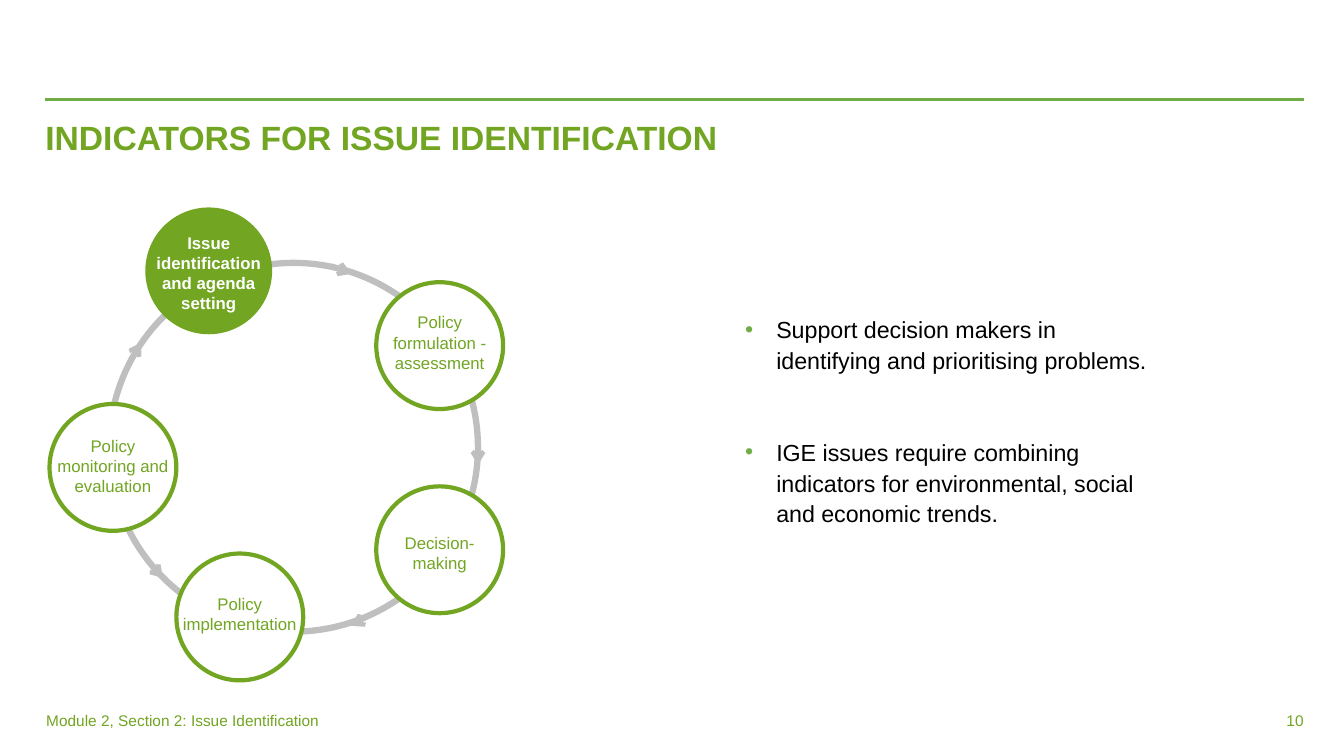
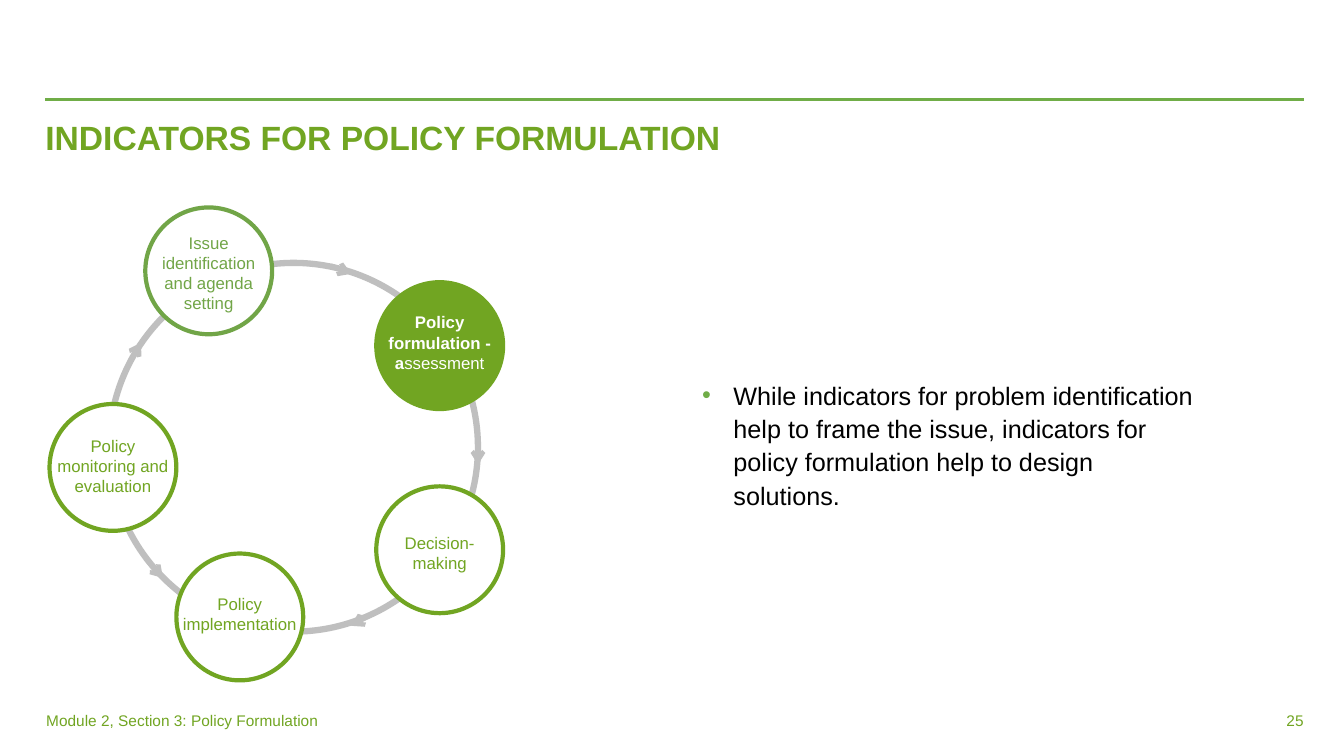
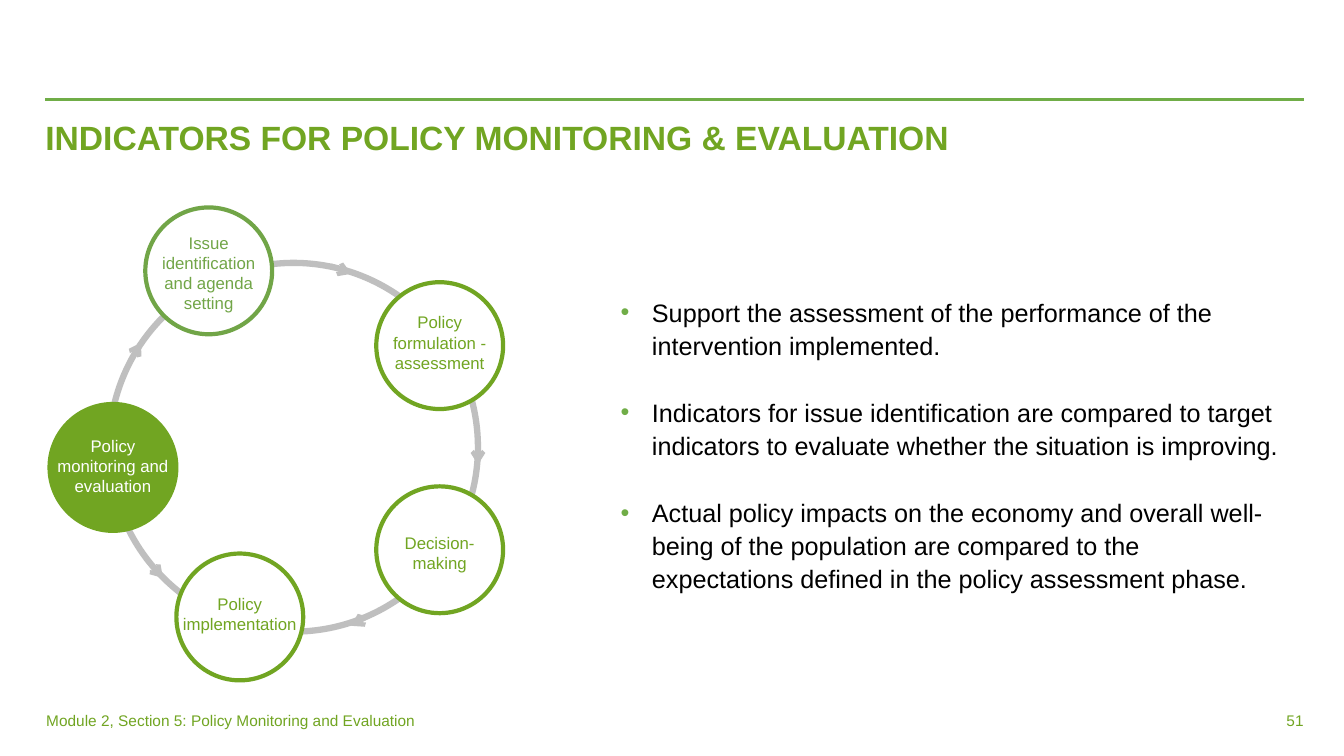
from lxml.etree import SubElement
from pptx import Presentation
from pptx.dml.color import RGBColor
from pptx.enum.shapes import MSO_CONNECTOR, MSO_SHAPE
from pptx.enum.text import MSO_ANCHOR, MSO_AUTO_SIZE, PP_ALIGN
from pptx.oxml.ns import qn
from pptx.util import Inches, Pt

HUES = {"green": "71A522", "moss": "71A547", "rule": "70AD47",
        "grey": "BFBFBF", "white": "FFFFFF", "black": "000000"}
FONT = "Arial"
WIDE, HIGH = Inches(13.333), Inches(7.5)
COLS, ROWS = 160, 90
LEFT, RIGHT = 5.4, 155.2
CYCLE = (5.9, 24.7)
RING = (7.1, 6.6, 43.9)
DISC = 15.1
STAGES = [
    ("Issue identification and agenda setting", (11.4, 0), (2.3, 15.2, 10.9)),
    ("Policy formulation - assessment", (38.9, 8.9), (2.9, 15.2, 8.5)),
    ("Decision-making", (38.9, 33.2), (4.7, 14.2, 6.4)),
    ("Policy implementation", (15.1, 41.2), (2.9, 16.2, 8.5)),
    ("Policy monitoring and evaluation", (0, 23.4), (3.1, 17, 8.5)),
]
ARROWS = [
    (9.8, 17.9, 10.9, 16.1),
    (33.5, 6.9, 35.9, 7.9),
    (51, 28.6, 51, 30.6),
    (38.5, 48.4, 35.9, 49.8),
    (11.4, 41.8, 13.5, 44.1),
]
PAGES = [
    {"title": "INDICATORS FOR ISSUE IDENTIFICATION",
     "foot": "Module 2, Section 2: Issue Identification", "page": "10",
     "live": 0, "bold": "Issue identification and agenda setting",
     "box": (88.7, 36.6, 49.6, 29.3), "size": 16.6, "gap": 44,
     "points": [
         "Support decision makers in identifying and prioritising problems.",
         "IGE issues require combining indicators for environmental, social "
         "and economic trends."]},
    {"title": "INDICATORS FOR POLICY FORMULATION",
     "foot": "Module 2, Section 3: Policy Formulation", "page": "25",
     "live": 1, "bold": "Policy formulation - a",
     "box": (83.6, 44.3, 59.9, 18.1), "size": 18, "gap": 24,
     "points": [
         "While indicators for problem identification help to frame the "
         "issue, indicators for policy formulation help to design solutions."]},
    {"title": "INDICATORS FOR POLICY MONITORING & EVALUATION",
     "foot": "Module 2, Section 5: Policy Monitoring and Evaluation",
     "page": "51", "live": 4, "bold": "",
     "box": (73.9, 34.4, 79.2, 42.4), "size": 18, "gap": 24,
     "points": [
         "Support the assessment of the performance of the intervention "
         "implemented.",
         "Indicators for issue identification are compared to target "
         "indicators to evaluate whether the situation is improving.",
         "Actual policy impacts on the economy and overall well-being of the "
         "population are compared to the expectations defined in the policy "
         "assessment phase."]},
]


def hue(name):
    """Return the named colour."""
    return RGBColor.from_string(HUES[name])


def cells(*spots):
    """Turn alternating columns and rows into slide lengths."""
    units = (WIDE / COLS, HIGH / ROWS)
    return [round(spot * units[i % 2]) for i, spot in enumerate(spots)]


def write(para, text, size, tint, bold=False):
    """Add one run to a paragraph."""
    run = para.add_run()
    run.text = text
    font = run.font
    font.name, font.size, font.bold = FONT, Pt(size), bold
    font.color.rgb = hue(tint)


def setup(frame, anchor=MSO_ANCHOR.TOP, left=0.0, right=0.0):
    """Set wrapping, anchor and insets, and return the first paragraph."""
    frame.word_wrap = True
    frame.auto_size = MSO_AUTO_SIZE.NONE
    frame.vertical_anchor = anchor
    frame.margin_left, frame.margin_right = Inches(left), Inches(right)
    frame.margin_top = frame.margin_bottom = Inches(0.05)
    return frame.paragraphs[0]


def label(slide, box, align, left=0.0, right=0.0):
    """Add a middle-anchored text box and return its paragraph."""
    frame = slide.shapes.add_textbox(*cells(*box)).text_frame
    para = setup(frame, MSO_ANCHOR.MIDDLE, left, right)
    para.alignment = align
    return para


def stroke(slide, ends, tint, width, arrow=False):
    """Draw a straight line, with an arrowhead if asked."""
    line = slide.shapes.add_connector(MSO_CONNECTOR.STRAIGHT, *cells(*ends))
    line.line.color.rgb = hue(tint)
    line.line.width = Pt(width)
    if arrow:
        SubElement(line.line._get_or_add_ln(), qn("a:tailEnd"), type="arrow")
    SubElement(line._element.spPr, qn("a:effectLst"))


def circle(slide, left, top, size, fill=None, edge=None, width=3):
    """Draw a circle with an optional fill and edge."""
    shape = slide.shapes.add_shape(
        MSO_SHAPE.OVAL, *cells(left, top, size, size))
    shape.shadow.inherit = False
    if fill:
        shape.fill.solid()
        shape.fill.fore_color.rgb = hue(fill)
    else:
        shape.fill.background()
    if edge:
        shape.line.color.rgb = hue(edge)
        shape.line.width = Pt(width)
    else:
        shape.line.fill.background()


def frame(slide, title, foot, page):
    """Place the rule, title, footer and page number."""
    stroke(slide, (LEFT, 11.8, RIGHT, 11.8), "rule", 2)
    head = slide.shapes.title
    head.left, head.top, head.width, head.height = cells(
        LEFT, 13.9, RIGHT - LEFT, 12.5)
    para = setup(head.text_frame)
    para.alignment, para.line_spacing = PP_ALIGN.LEFT, 0.9
    write(para, title, 24, "green", True)
    note = label(slide, (LEFT + 0.1, 83.4, 48.1, 4.8), PP_ALIGN.LEFT, 0, 0.1)
    write(note, foot, 11, "green")
    folio = label(slide, (RIGHT - 13.3, 83.4, 13.3, 4.8),
                  PP_ALIGN.RIGHT, 0.1, 0)
    write(folio, page, 11, "green")


def stage(slide, x, y, index, live, bold):
    """Draw one stage of the cycle with its centred label."""
    text, (dx, dy), (drop, wide, high) = STAGES[index]
    tint = "moss" if index == 0 else "green"
    if live:
        edge = None if index == 0 else "green"
        circle(slide, x + dx, y + dy, DISC, "green", edge)
    else:
        circle(slide, x + dx, y + dy, DISC, "white", tint)
    box = (x + dx + (DISC - wide) / 2, y + dy + drop, wide, high)
    para = label(slide, box, PP_ALIGN.CENTER, 0.1, 0.1)
    cut = len(bold) if live else 0
    for part, heavy in ((text[:cut], True), (text[cut:], False)):
        if part:
            write(para, part, 12, "white" if live else tint, heavy)


def cycle(slide, spot, live, bold):
    """Draw the policy cycle from its top left corner."""
    x, y = spot
    dx, dy, size = RING
    circle(slide, x + dx, y + dy, size, None, "grey", 4.5)
    for a, b, c, d in ARROWS:
        stroke(slide, (x + a, y + b, x + c, y + d), "grey", 3, True)
    for index in range(len(STAGES)):
        stage(slide, x, y, index, index == live, bold)


def bullet(para):
    """Give a paragraph a green hanging bullet."""
    props = para._p.get_or_add_pPr()
    props.set("marL", str(Inches(0.31)))
    props.set("indent", str(-Inches(0.31)))
    tint = SubElement(props, qn("a:buClr"))
    SubElement(tint, qn("a:srgbClr"), val=HUES["rule"])
    SubElement(props, qn("a:buFont"), typeface=FONT)
    SubElement(props, qn("a:buChar"), char="•")


def points(slide, box, texts, size, gap):
    """Write the bulleted points in a box."""
    body = slide.shapes.add_textbox(*cells(*box)).text_frame
    first = setup(body)
    for i, text in enumerate(texts):
        para = body.add_paragraph() if i else first
        bullet(para)
        para.line_spacing = 1.1
        if i:
            para.space_before = Pt(gap)
        write(para, text, size, "black")


def main():
    """Build and save the deck."""
    deck = Presentation()
    deck.slide_width, deck.slide_height = WIDE, HIGH
    for page in PAGES:
        slide = deck.slides.add_slide(deck.slide_layouts[5])
        frame(slide, page["title"], page["foot"], page["page"])
        cycle(slide, CYCLE, page["live"], page["bold"])
        points(slide, page["box"], page["points"], page["size"], page["gap"])
    deck.save("out.pptx")


if __name__ == "__main__":
    main()
